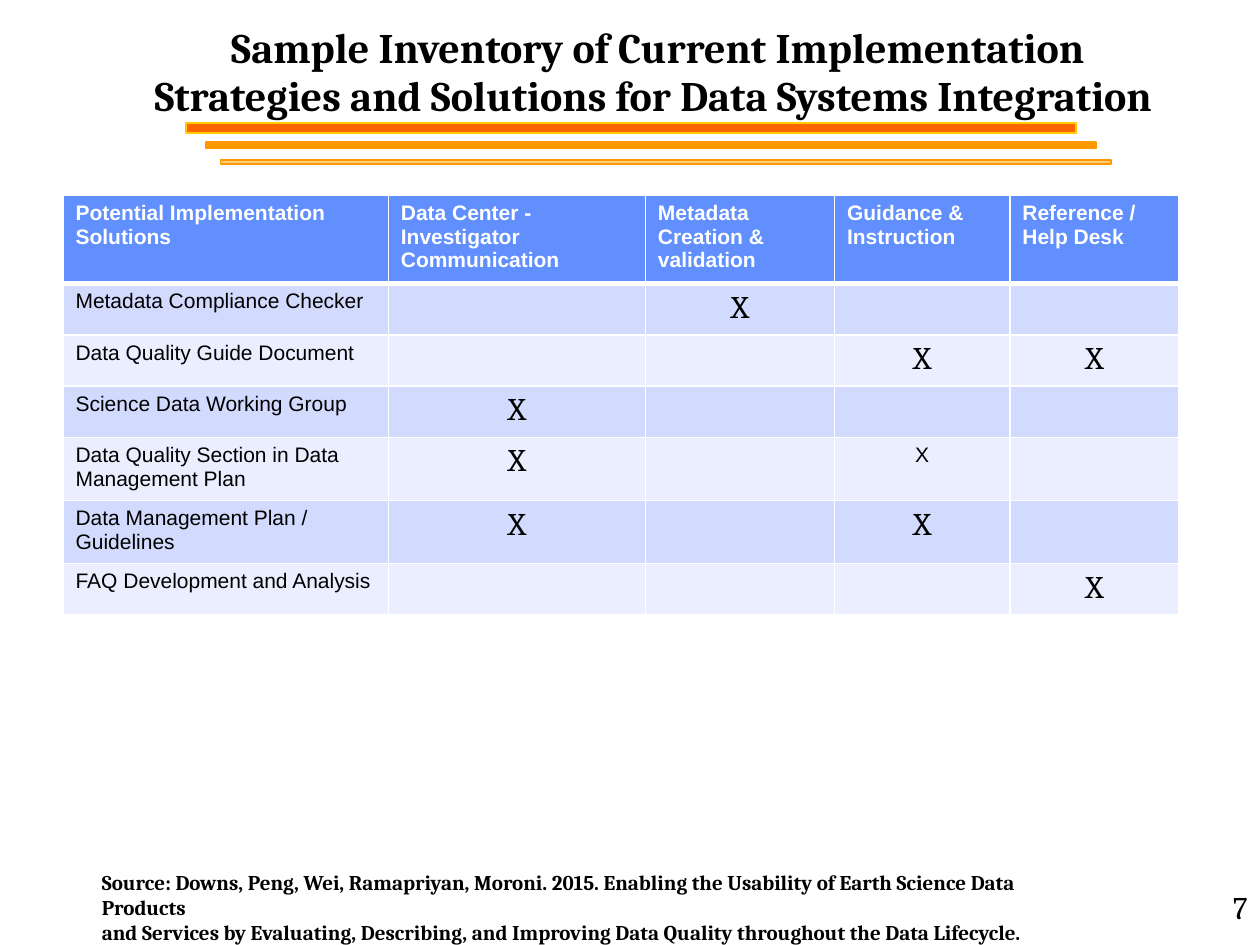
from lxml import etree
from pptx import Presentation
from pptx.dml.color import RGBColor
from pptx.enum import shapes, text
from pptx.oxml.ns import qn
from pptx.util import Pt

SOLUTIONS = [
    "Potential Implementation Solutions",
    "Data Center - Investigator Communication",
    "Metadata Creation & validation",
    "Guidance & Instruction",
    "Reference / Help Desk",
]
ONE_LINE, TWO_LINES, HEADER_HEIGHT = 29.3, 34.1, 47.4
INVENTORY = [
    ("Metadata Compliance Checker", {2}, ONE_LINE),
    ("Data Quality Guide Document", {3, 4}, ONE_LINE),
    ("Science Data Working Group", {1}, ONE_LINE),
    ("Data Quality Section in Data Management Plan", {1, 3}, TWO_LINES),
    ("Data Management Plan / Guidelines", {1, 3}, TWO_LINES),
    ("FAQ Development and Analysis", {4}, ONE_LINE),
]
SMALL_MARK = (4, 3)
COLUMN_WIDTHS = [185.9, 146.9, 108.1, 100.2, 96.5]
HEADER_FILL, BAND_FILLS = "618FFD", ["D2DBFE", "EAEEFF"]


def color(value):
    return RGBColor.from_string(value)


def style(paragraph, size, face, ink="000000", bold=False, align=text.PP_ALIGN.LEFT):
    paragraph.alignment = align
    font = paragraph.font
    font.size, font.name, font.bold = Pt(size), face, bold
    font.color.rgb = color(ink)


def add_text(slide, box, lines, size, bold=False, align=text.PP_ALIGN.LEFT,
             anchor=text.MSO_ANCHOR.TOP, spacing=None):
    frame = slide.shapes.add_textbox(*map(Pt, box)).text_frame
    frame.word_wrap = True
    frame.vertical_anchor = anchor
    frame.text = "\n".join(lines)
    for paragraph in frame.paragraphs:
        style(paragraph, size, "Cambria", bold=bold, align=align)
        paragraph.line_spacing = spacing


def add_bars(slide, left, top):
    bars = [
        (0, 0, 5.8, "FF6600", "FFCC00", None),
        (11.6, 11.2, 3.6, "FF9900", "FF9900", None),
        (19.8, 21.3, 2.2, "FF9900", "FF9900", 50),
    ]
    for dx, dy, height, fill, line, opacity in bars:
        bar = slide.shapes.add_shape(
            shapes.MSO_SHAPE.RECTANGLE, Pt(left + dx), Pt(top + dy), Pt(508.7), Pt(height))
        bar.shadow.inherit = False
        bar.fill.solid()
        bar.fill.fore_color.rgb = color(fill)
        bar.line.color.rgb = color(line)
        bar.line.width = Pt(1)
        if opacity:
            shade = bar.fill._xPr.find(qn("a:solidFill"))[0]
            etree.SubElement(shade, qn("a:alpha"), val=str(opacity * 1000))


def paint_cell(cell, fill, bottom=1):
    properties = cell._tc.get_or_add_tcPr()
    for side, width in (("L", 1), ("R", 1), ("T", 1), ("B", bottom)):
        border = etree.SubElement(properties, qn(f"a:ln{side}"), w=str(Pt(width)))
        solid = etree.SubElement(border, qn("a:solidFill"))
        etree.SubElement(solid, qn("a:srgbClr"), val="FFFFFF")
    cell.fill.solid()
    cell.fill.fore_color.rgb = color(fill)


def write_cell(cell, wording, *look, **options):
    cell.text = wording
    style(cell.text_frame.paragraphs[0], *look, **options)


def add_inventory(slide, left, top):
    heights = [HEADER_HEIGHT] + [height for _, _, height in INVENTORY]
    table = slide.shapes.add_table(
        len(heights), len(SOLUTIONS), Pt(left), Pt(top),
        Pt(sum(COLUMN_WIDTHS)), Pt(sum(heights))).table
    for column, width in zip(table.columns, COLUMN_WIDTHS):
        column.width = Pt(width)
    for row, height in zip(table.rows, heights):
        row.height = Pt(height)

    for column, heading in enumerate(SOLUTIONS):
        cell = table.cell(0, column)
        write_cell(cell, heading, 12, "Arial", "FFFFFF", True)
        paint_cell(cell, HEADER_FILL, bottom=3)

    for row, (solution, marks, _) in enumerate(INVENTORY, 1):
        for column in range(len(SOLUTIONS)):
            cell = table.cell(row, column)
            if column == 0:
                write_cell(cell, solution, 12, "Arial")
            elif column in marks:
                size, face = (12, "Arial") if (row, column) == SMALL_MARK else (18, "Cambria")
                write_cell(cell, "X", size, face, align=text.PP_ALIGN.CENTER)
            paint_cell(cell, BAND_FILLS[(row - 1) % 2])


def main():
    deck = Presentation()
    deck.slide_width, deck.slide_height = Pt(720), Pt(540)
    slide = deck.slides.add_slide(deck.slide_layouts[6])
    add_bars(slide, 106.2, 70.1)
    add_text(slide, (78.5, 19.2, 594.7, 45.4),
             ["Sample Inventory of Current Implementation Strategies and Solutions "
              "for Data Systems Integration "],
             24, True, text.PP_ALIGN.CENTER, text.MSO_ANCHOR.MIDDLE, 0.94)
    add_inventory(slide, 36, 111.6)
    add_text(slide, (570.2, 504, 149.8, 36), ["7"], 18, align=text.PP_ALIGN.RIGHT)
    add_text(slide, (51.1, 493.2, 583.2, 36),
             ["Source: Downs, Peng, Wei, Ramapriyan, Moroni. 2015. Enabling the Usability "
              "of Earth Science Data Products",
              "and Services by Evaluating, Describing, and Improving Data Quality "
              "throughout the Data Lifecycle."],
             12, True)
    deck.save("out.pptx")


if __name__ == "__main__":
    main()
